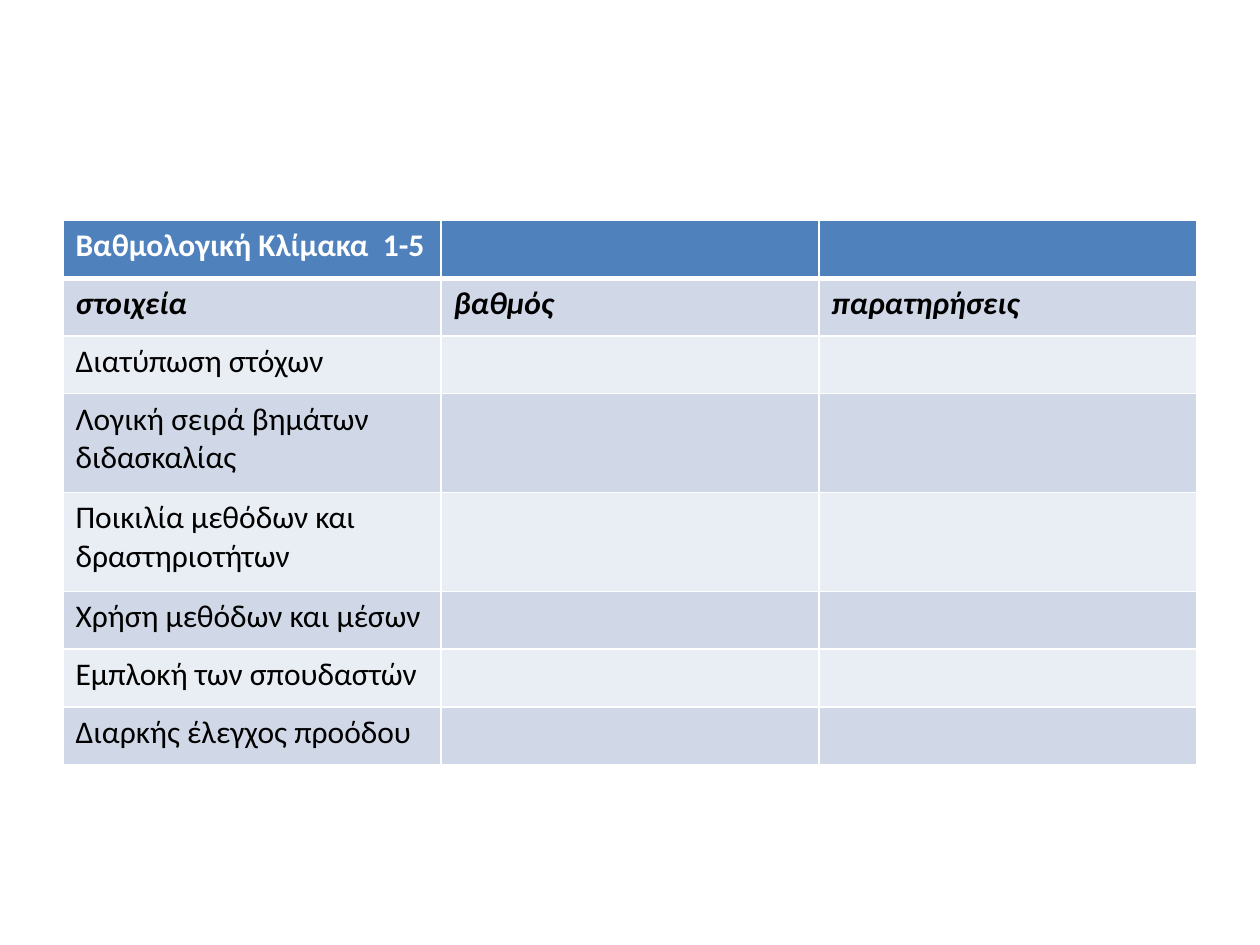
"""Build a slide with a grading table for teaching practice."""
from dataclasses import dataclass

from lxml.etree import SubElement
from pptx import Presentation
from pptx.dml.color import RGBColor
from pptx.oxml.ns import qn
from pptx.util import Pt


@dataclass(frozen=True)
class Theme:
    font: str = "Calibri"
    size: float = 18
    header_fill: str = "4F81BD"
    bands: tuple = ("D0D8E8", "E9EDF4")
    light: str = "FFFFFF"
    dark: str = "000000"
    rule: float = 1
    header_rule: float = 3


class SlideBuilder:
    def __init__(self, slide, theme):
        self.slide = slide
        self.theme = theme

    def table(self, rows, left, top, column_width, heights):
        width = column_width * len(rows[0])
        grid = self.slide.shapes.add_table(
            len(rows), len(rows[0]), Pt(left), Pt(top), Pt(width), Pt(sum(heights))
        ).table
        for column in grid.columns:
            column.width = Pt(column_width)
        for index, (wording, height) in enumerate(zip(rows, heights)):
            grid.rows[index].height = Pt(height)
            for cell, text in zip(grid.rows[index].cells, wording):
                self.cell(cell, text, index)

    def cell(self, cell, text, row):
        theme = self.theme
        header = row == 0
        self.border(cell, "L", theme.rule)
        self.border(cell, "R", theme.rule)
        self.border(cell, "T", theme.header_rule if row == 1 else theme.rule)
        self.border(cell, "B", theme.header_rule if header else theme.rule)
        fill = theme.header_fill if header else theme.bands[(row - 1) % 2]
        cell.fill.solid()
        cell.fill.fore_color.rgb = RGBColor.from_string(fill)
        if text:
            run = cell.text_frame.paragraphs[0].add_run()
            run.text = text
            style = {"name": theme.font, "size": Pt(theme.size),
                     "bold": row < 2, "italic": row == 1}
            for attribute, value in style.items():
                setattr(run.font, attribute, value)
            color = theme.light if header else theme.dark
            run.font.color.rgb = RGBColor.from_string(color)

    def border(self, cell, side, weight):
        properties = cell._tc.get_or_add_tcPr()
        line = SubElement(properties, qn(f"a:ln{side}"), w=str(Pt(weight)))
        paint = SubElement(line, qn("a:solidFill"))
        SubElement(paint, qn("a:srgbClr"), val=self.theme.light)


def main():
    presentation = Presentation()
    presentation.slide_width, presentation.slide_height = Pt(720), Pt(540)
    slide = presentation.slides.add_slide(presentation.slide_layouts[6])
    criteria = (
        "Διατύπωση στόχων",
        "Λογική σειρά βημάτων διδασκαλίας",
        "Ποικιλία μεθόδων και δραστηριοτήτων",
        "Χρήση μεθόδων και μέσων",
        "Εμπλοκή των σπουδαστών",
        "Διαρκής έλεγχος προόδου",
    )
    rows = [
        ("Βαθμολογική Κλίμακα  1-5", "", ""),
        ("στοιχεία", "βαθμός", "παρατηρήσεις"),
        *((criterion, "", "") for criterion in criteria),
    ]
    one_line, two_lines = 33, 56.5
    heights = [one_line] * 3 + [two_lines] * 2 + [one_line] * 3
    SlideBuilder(slide, Theme()).table(
        rows, left=36, top=126, column_width=216, heights=heights
    )
    presentation.save("out.pptx")


if __name__ == "__main__":
    main()
